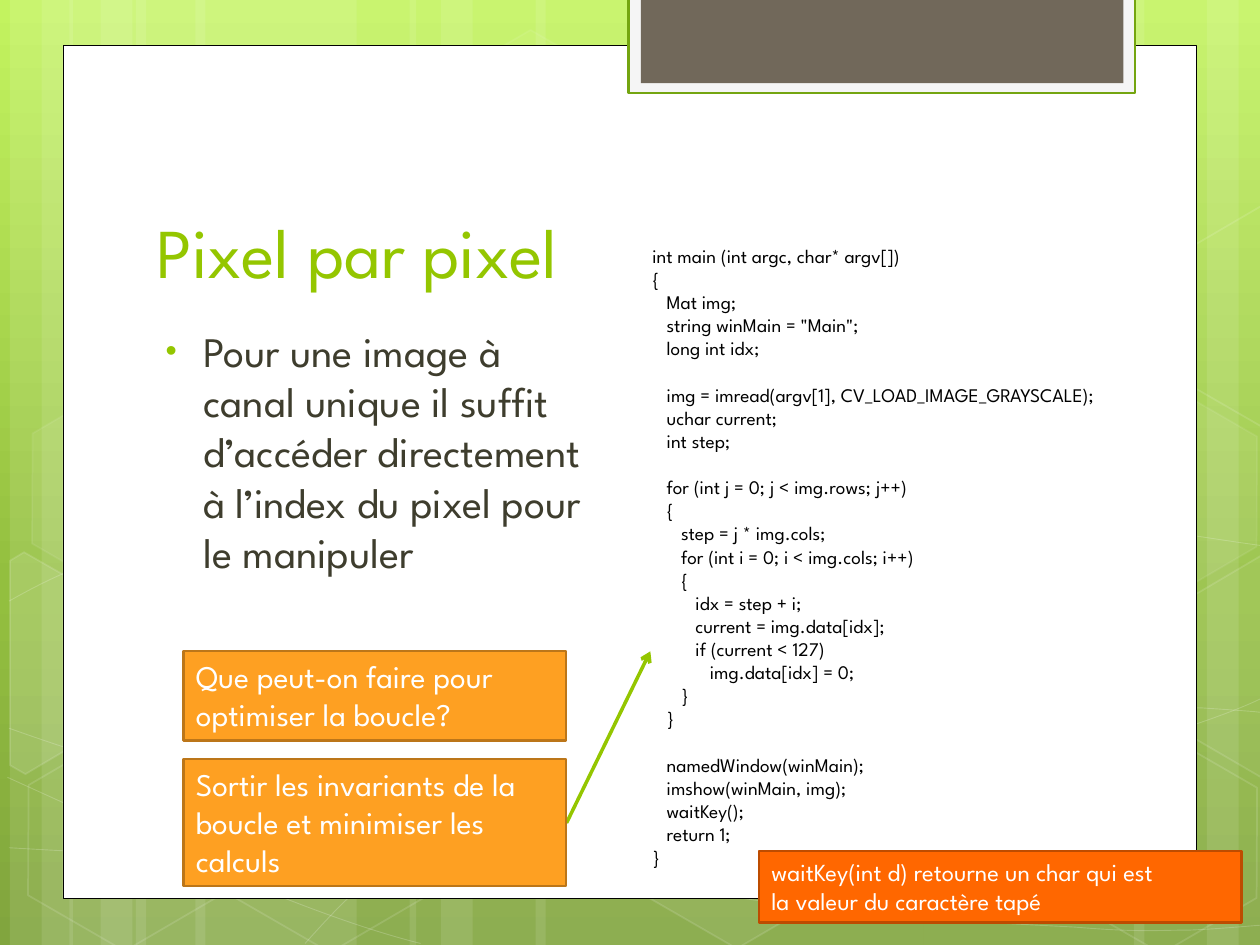
from math import cos, radians, sin

from lxml.etree import SubElement
from pptx import Presentation
from pptx.dml.color import RGBColor
from pptx.enum.shapes import MSO_CONNECTOR, MSO_SHAPE
from pptx.enum.text import MSO_ANCHOR, PP_ALIGN
from pptx.oxml.ns import qn
from pptx.util import Cm, Pt

FONT = "League Spartan"
COLORS = {
    "sky": "C3F35F", "meadow": "93BF3F", "moss": "81A53E",
    "white": "FFFFFF", "black": "000000", "pale": "F5F5F5",
    "leaf": "74A510", "lime": "94C600", "taupe": "71685A", "ink": "3E3D2D",
    "amber": "FEA022", "amber_edge": "BC7619",
    "orange": "FF6700", "orange_edge": "BD4C00",
}
WIDTH, HEIGHT = 25.4, 19.05
TILT = 30

# Left edge and width of the translucent vertical bands
STRIPES = [
    (2.74, 4.45), (0.2, 1.27), (0.84, 2.11), (3.94, 4.45), (1.4, 1.27), (2.03, 2.11),
    (18.62, 4.45), (24.33, 1.27), (22.86, 2.11), (10.8, 7.82), (8.26, 1.27), (8.89, 2.11),
]
# Control points of chained cubic curves
WAVES = [
    [(0.18, 17.09), (1.55, 17.17), (2.92, 17.25), (4.83, 17.22), (6.73, 17.2),
     (9.09, 17.15), (11.63, 16.89), (14.17, 16.64), (17.78, 16.13), (20.12, 15.67),
     (22.43, 15.19), (24.82, 14.43), (25.58, 14)],
    [(0.18, 12.12), (0.91, 11.71), (1.65, 11.33), (3.07, 10.95), (4.52, 10.57),
     (6.58, 10.06), (8.81, 9.83), (11.07, 9.65), (13.82, 9.63), (16.61, 9.83),
     (19.41, 10.03), (24.05, 10.82), (25.58, 11.02)],
    [(0.15, 15.67), (3.23, 17.07), (6.27, 18.47), (8.48, 19.02)],
    [(0.18, 14.68), (0.97, 14.96), (1.78, 15.24), (3.25, 15.65), (4.72, 16.03),
     (6.93, 16.66), (9.07, 17.09), (11.18, 17.53), (13.84, 17.98), (15.95, 18.24),
     (18.06, 18.52), (20.32, 18.62), (21.67, 18.69), (22.99, 18.8), (23.34, 18.75),
     (24, 18.75), (24.66, 18.72), (25.12, 18.67), (25.58, 18.64)],
    [(6.15, 19.02), (6.6, 18.52), (7.06, 18.01), (7.67, 17.55), (8.28, 17.09),
     (9.14, 16.59), (9.86, 16.23), (10.57, 15.88), (11, 15.72), (11.94, 15.47),
     (12.85, 15.21), (14.55, 14.86), (15.44, 14.68), (16.36, 14.5), (16.48, 14.5),
     (17.27, 14.45), (18.06, 14.38), (19.3, 14.3), (20.17, 14.27), (21.06, 14.25),
     (22.5, 14.27), (22.5, 14.27), (23.07, 14.27), (23.64, 14.27), (24.21, 14.27),
     (24.66, 14.3), (25.1, 14.33), (25.32, 14.35), (25.55, 14.38), (25.48, 14.35),
     (25.55, 14.38)],
]
# Left, top, fill opacity, line opacity
HEXAGONS = [
    (8.48, 0.91, 4, 8), (12.62, 14.96, 6, 12), (0.28, 15.01, 0, 12), (0.36, 7.92, 7, 8),
    (4.42, 15.04, 0, 12), (19.13, 11.51, 10, 12), (21.18, 15.06, 0, 12), (21.18, 7.98, 7, 8),
]
# Hexagons cut off by the slide edge: centre, fill opacity, corners
CUT_HEXAGONS = [
    ((0.91, 13.59), 10, [(0.2, 11.3), (0.48, 11.13), (2.44, 12.24), (2.41, 14.48),
                         (0.51, 15.6), (0.2, 15.42)]),
    ((25.02, 13.21), 4, [(23.52, 12.32), (25.43, 11.2), (25.63, 11.33), (25.63, 15.57),
                         (25.45, 15.67), (23.52, 14.55)]),
    ((25.02, 6.12), 0, [(23.52, 5.26), (25.43, 4.14), (25.65, 4.27), (25.63, 8.51),
                        (25.45, 8.61), (23.52, 7.49)]),
]
CODE = """int main (int argc, char* argv[])
{
   Mat img;
   string winMain = "Main";
   long int idx;

   img = imread(argv[1], CV_LOAD_IMAGE_GRAYSCALE);
   uchar current;
   int step;

   for (int j = 0; j < img.rows; j++)
   {
      step = j * img.cols;
      for (int i = 0; i < img.cols; i++)
      {
         idx = step + i;
         current = img.data[idx];
         if (current < 127)
            img.data[idx] = 0;
      }
   }

   namedWindow(winMain);
   imshow(winMain, img);
   waitKey();
   return 1;
}"""


def color(name):
    return RGBColor.from_string(COLORS[name])


def apply(target, **formats):
    for attribute, value in formats.items():
        setattr(target, attribute, value)


def paint(shape, fill=None, line=None, weight=1.25, fill_opacity=100, line_opacity=100):
    shape.shadow.inherit = False
    for part, name, opacity in ((shape.fill, fill, fill_opacity),
                                (shape.line.fill, line, line_opacity)):
        if not (name and opacity):
            part.background()
            continue
        part.solid()
        part.fore_color.rgb = color(name)
        if opacity < 100:
            node = part._xPr.find(".//" + qn("a:srgbClr"))
            SubElement(node, qn("a:alpha"), val=str(opacity * 1000))
    if line:
        shape.line.width = Pt(weight)


def add_panel(slide, box, preset=MSO_SHAPE.RECTANGLE, **look):
    panel = slide.shapes.add_shape(preset, *map(Cm, box))
    paint(panel, **look)
    return panel


def add_outline(slide, points, close, **look):
    points = [(x * 100, y * 100) for x, y in points]
    builder = slide.shapes.build_freeform(*points[0], scale=Cm(0.01))
    builder.add_line_segments(points[1:], close=close)
    outline = builder.convert_to_shape()
    paint(outline, line="white", **look)
    return outline


def add_wave(slide, controls):
    anchors = controls[::3]
    wave = add_outline(slide, anchors, False, weight=0.5, line_opacity=20)
    left, top = (min(axis) for axis in zip(*anchors))
    # Turn each straight segment into a cubic curve
    for number, segment in enumerate(list(wave._element.iter(qn("a:lnTo")))):
        segment.tag = qn("a:cubicBezTo")
        handles = controls[number * 3 + 1:number * 3 + 3]
        for position, (x, y) in enumerate(handles):
            handle = SubElement(segment, qn("a:pt"), x=str(round((x - left) * 100)),
                                y=str(round((y - top) * 100)))
            segment.insert(position, handle)


def turn_back(point, center):
    x, y = point[0] - center[0], point[1] - center[1]
    cosine, sine = cos(radians(TILT)), sin(radians(TILT))
    return center[0] + x * cosine + y * sine, center[1] - x * sine + y * cosine


def write(paragraph, text, size, ink):
    paragraph.text = text
    paragraph.alignment = PP_ALIGN.LEFT
    apply(paragraph.font, name=FONT, size=Pt(size))
    paragraph.font.color.rgb = color(ink)


def add_text(slide, box, text, size, ink, anchor=MSO_ANCHOR.TOP):
    frame = slide.shapes.add_textbox(*map(Cm, box)).text_frame
    apply(frame, word_wrap=True, vertical_anchor=anchor)
    write(frame.paragraphs[0], text, size, ink)
    return frame


def add_backdrop(slide):
    fill = slide.background.fill
    fill.gradient()
    fill.gradient_angle = 270
    stops = fill._fill._gradFill.find(qn("a:gsLst"))
    for stop in list(stops):
        stops.remove(stop)
    for position, name in ((0, "sky"), (62, "meadow"), (100, "moss")):
        stop = SubElement(stops, qn("a:gs"), pos=str(position * 1000))
        SubElement(stop, qn("a:srgbClr"), val=COLORS[name])
    for left, width in STRIPES:
        add_panel(slide, (left, 0, width, HEIGHT), fill="white", fill_opacity=10)
    for controls in WAVES:
        add_wave(slide, controls)
    for left, top, fill_opacity, line_opacity in HEXAGONS:
        hexagon = add_panel(slide, (left, top, 4.45, 3.86), MSO_SHAPE.HEXAGON,
                            fill="white", line="white", weight=1,
                            fill_opacity=fill_opacity, line_opacity=line_opacity)
        hexagon.adjustments[0] = 0.285
        hexagon.rotation = TILT
    for center, opacity, corners in CUT_HEXAGONS:
        upright = [turn_back(corner, center) for corner in corners]
        add_outline(slide, upright, True, fill="white", weight=1,
                    fill_opacity=opacity, line_opacity=12).rotation = TILT


def add_page(slide, left, top, width, height):
    add_panel(slide, (left, top, width, height), fill="white", line="black", weight=0.5)
    # Tab hanging from the top edge
    add_panel(slide, (left + 11.4, -0.05, 10.21, 1.93), fill="pale", line="leaf")
    add_panel(slide, (left + 11.65, -0.05, 9.73, 1.73), fill="taupe")


def add_explanation(slide, left, top):
    add_text(slide, (left, top, 19.51, 3.18), "Pixel par pixel", 40, "lime", MSO_ANCHOR.BOTTOM)
    body = add_text(slide, (left, top + 3.59, 9.5, 9.7),
                    "Pour une image à canal unique il suffit d’accéder directement "
                    "à l’index du pixel pour le manipuler", 24, "ink")
    paragraph = body.paragraphs[0]
    paragraph.space_before = Pt(4.8)
    bullet = paragraph._p.get_or_add_pPr()
    for key, value in {"marL": Cm(0.95), "indent": Cm(-0.76)}.items():
        bullet.set(key, str(value))
    SubElement(SubElement(bullet, qn("a:buClr")), qn("a:srgbClr"), val=COLORS["lime"])
    SubElement(bullet, qn("a:buSzPct"), val="76000")
    SubElement(bullet, qn("a:buFont"), typeface="Arial")
    SubElement(bullet, qn("a:buChar"), char="•")


def add_code(slide, box, size=11):
    frame = add_text(slide, box, "", size, "black")
    paragraph, gap = frame.paragraphs[0], 0
    for number, line in enumerate(CODE.splitlines()):
        if not line:
            gap = size * 1.2
            continue
        if number:
            paragraph = frame.add_paragraph()
        statement = line.lstrip()
        write(paragraph, statement, size, "black")
        level = (len(line) - len(statement)) // 3
        paragraph._p.get_or_add_pPr().set("marL", str(Cm(0.29 * level)))
        paragraph.space_before = Pt(gap)
        gap = 0


def add_note(slide, box, text, size, fill):
    frame = add_panel(slide, box, fill=fill, line=fill + "_edge").text_frame
    apply(frame, word_wrap=True, vertical_anchor=MSO_ANCHOR.TOP)
    write(frame.paragraphs[0], text, size, "white")


def add_arrow(slide, start, end):
    arrow = slide.shapes.add_connector(MSO_CONNECTOR.STRAIGHT, *map(Cm, start + end))
    arrow.line.color.rgb = color("lime")
    arrow.line.width = Pt(2)
    SubElement(arrow.line._get_or_add_ln(), qn("a:tailEnd"), type="arrow")
    SubElement(arrow._element.spPr, qn("a:effectLst"))


def main():
    deck = Presentation()
    apply(deck, slide_width=Cm(WIDTH), slide_height=Cm(HEIGHT))
    slide = deck.slides.add_slide(deck.slide_layouts[6])
    add_backdrop(slide)
    add_page(slide, 1.27, 0.91, 22.86, 17.2)
    add_explanation(slide, 2.9, 2.84)
    add_code(slide, (12.9, 4.8, 11.18, 12.95))
    # Question, its answer and the remark on waitKey
    add_note(slide, (3.7, 13.13, 7.72, 1.8), "Que peut-on faire pour\noptimiser la boucle?", 18, "amber")
    add_arrow(slide, (11.42, 16.59), (13.11, 13.13))
    add_note(slide, (3.7, 15.3, 7.72, 2.56),
             "Sortir les invariants de la boucle et minimiser les calculs", 18, "amber")
    add_note(slide, (15.3, 17.15, 9.73, 1.45),
             "waitKey(int d) retourne un char qui est\nla valeur du caractère tapé", 14, "orange")
    deck.save("out.pptx")


if __name__ == "__main__":
    main()
